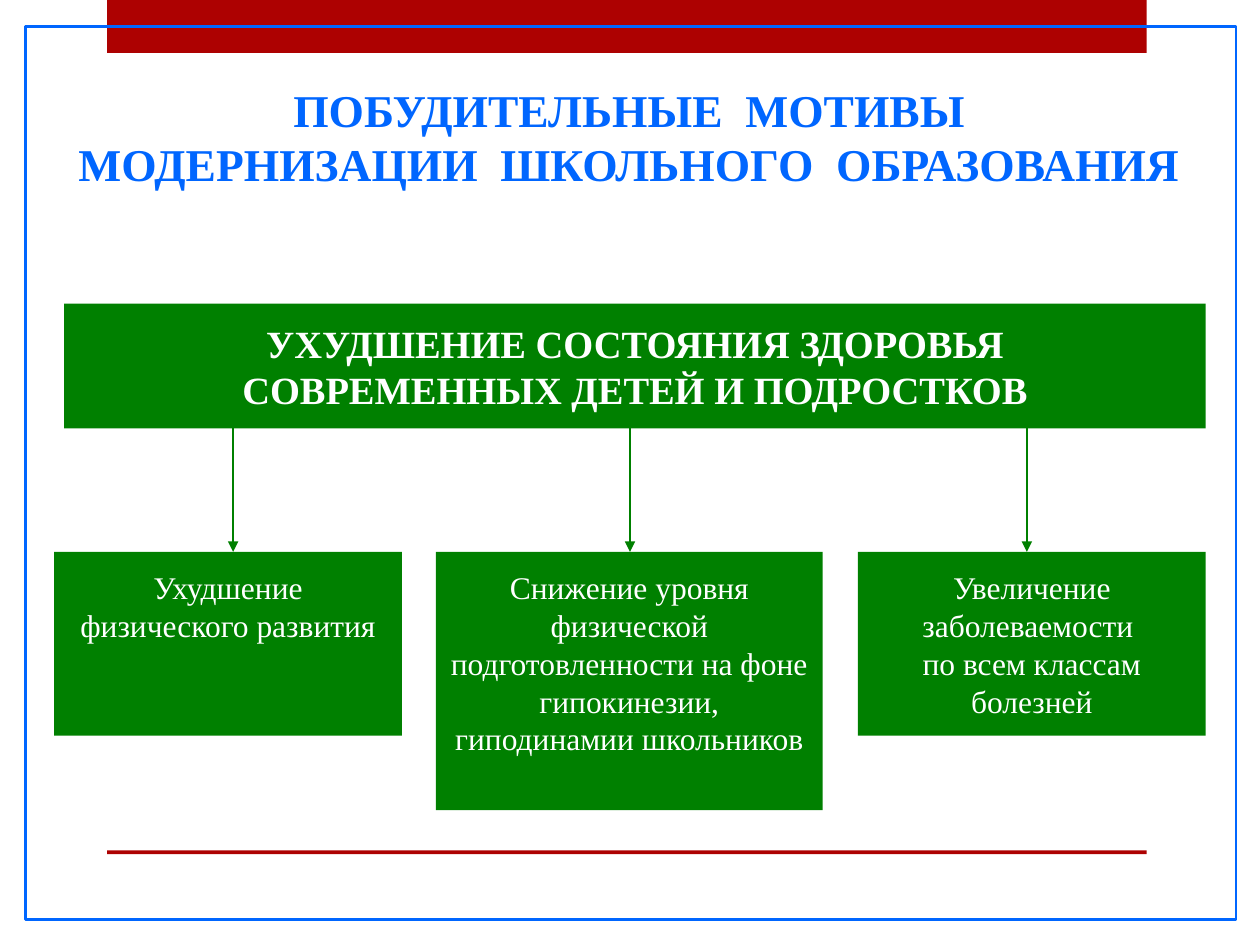
from lxml import etree
from pptx import Presentation
from pptx.dml.color import RGBColor
from pptx.enum import shapes, text
from pptx.oxml.ns import qn
from pptx.util import Inches, Pt

RED = RGBColor(0xAD, 0x01, 0x01)
BLUE = RGBColor(0x00, 0x66, 0xFF)
GREEN = RGBColor(0x00, 0x80, 0x00)
WHITE = RGBColor(0xFF, 0xFF, 0xFF)

TITLE = "ПОБУДИТЕЛЬНЫЕ  МОТИВЫ\nМОДЕРНИЗАЦИИ  ШКОЛЬНОГО  ОБРАЗОВАНИЯ"
CAUSE = "УХУДШЕНИЕ СОСТОЯНИЯ ЗДОРОВЬЯ\nСОВРЕМЕННЫХ ДЕТЕЙ И ПОДРОСТКОВ"
EFFECTS = [
    (0.43, 2.76, 1.46, 1.85, "Ухудшение физического развития"),
    (3.46, 3.07, 2.05, 5, "Снижение уровня физической подготовленности на фоне "
                          "гипокинезии, гиподинамии школьников"),
    (6.81, 2.76, 1.46, 8.15, "Увеличение заболеваемости \nпо всем классам болезней"),
]


def add_rectangle(slide, box, fill=None, line=None):
    shape = slide.shapes.add_shape(shapes.MSO_SHAPE.RECTANGLE, *map(Inches, box))
    shape.shadow.inherit = False
    if fill is None:
        shape.fill.background()
    else:
        shape.fill.solid()
        shape.fill.fore_color.rgb = fill
    if line is None:
        shape.line.fill.background()
    else:
        shape.line.color.rgb = line
        shape.line.width = Pt(1.5)
    return shape


def write_text(shape, words, size, color, bold=False, margin=0.13):
    frame_format = {
        "word_wrap": True,
        "vertical_anchor": text.MSO_ANCHOR.TOP,
        "margin_left": Inches(0.1),
        "margin_right": Inches(0.1),
        "margin_top": Inches(margin),
        "margin_bottom": Inches(margin),
    }
    for name, value in frame_format.items():
        setattr(shape.text_frame, name, value)
    paragraph = shape.text_frame.paragraphs[0]
    paragraph.text = words
    paragraph.alignment = text.PP_ALIGN.CENTER
    font_format = {"name": "Times New Roman", "size": Pt(size), "bold": bold}
    for run in paragraph.runs:
        for name, value in font_format.items():
            setattr(run.font, name, value)
        run.font.color.rgb = color


def add_frame(slide, box):
    for top, height in ((0, 0.42), (6.75, 0.03)):
        add_rectangle(slide, (0.85, top, 8.25, height), fill=RED)
    add_rectangle(slide, box, line=BLUE)


def add_title(slide, box):
    title = slide.shapes.add_textbox(*map(Inches, box))
    write_text(title, TITLE, 26, BLUE, bold=True, margin=0.05)


def add_cause(slide, box):
    cause = add_rectangle(slide, box, fill=GREEN)
    write_text(cause, CAUSE, 22, WHITE, bold=True)


def add_effect(slide, box, words):
    effect = add_rectangle(slide, box, fill=GREEN)
    write_text(effect, words, 18, WHITE)


def add_arrow(slide, x, top, bottom):
    arrow = slide.shapes.add_connector(
        shapes.MSO_CONNECTOR.STRAIGHT, *map(Inches, (x, top, x, bottom)))
    arrow.line.color.rgb = GREEN
    arrow.line.width = Pt(1.5)
    properties = arrow.line._get_or_add_ln()
    etree.SubElement(properties, qn("a:tailEnd"), type="triangle")
    etree.SubElement(properties.getparent(), qn("a:effectLst"))


def main():
    presentation = Presentation()
    presentation.slide_width = Inches(10)
    presentation.slide_height = Inches(7.5)
    slide = presentation.slides.add_slide(presentation.slide_layouts[6])
    add_frame(slide, (0.2, 0.21, 9.61, 7.09))
    add_title(slide, (0.27, 0.6, 9.45, 0.97))
    add_cause(slide, (0.51, 2.41, 9.06, 0.99))
    effects_top = 4.38
    for left, width, height, arrow_x, words in EFFECTS:
        add_effect(slide, (left, effects_top, width, height), words)
        add_arrow(slide, arrow_x, 3.35, effects_top)
    presentation.save("out.pptx")


if __name__ == "__main__":
    main()
